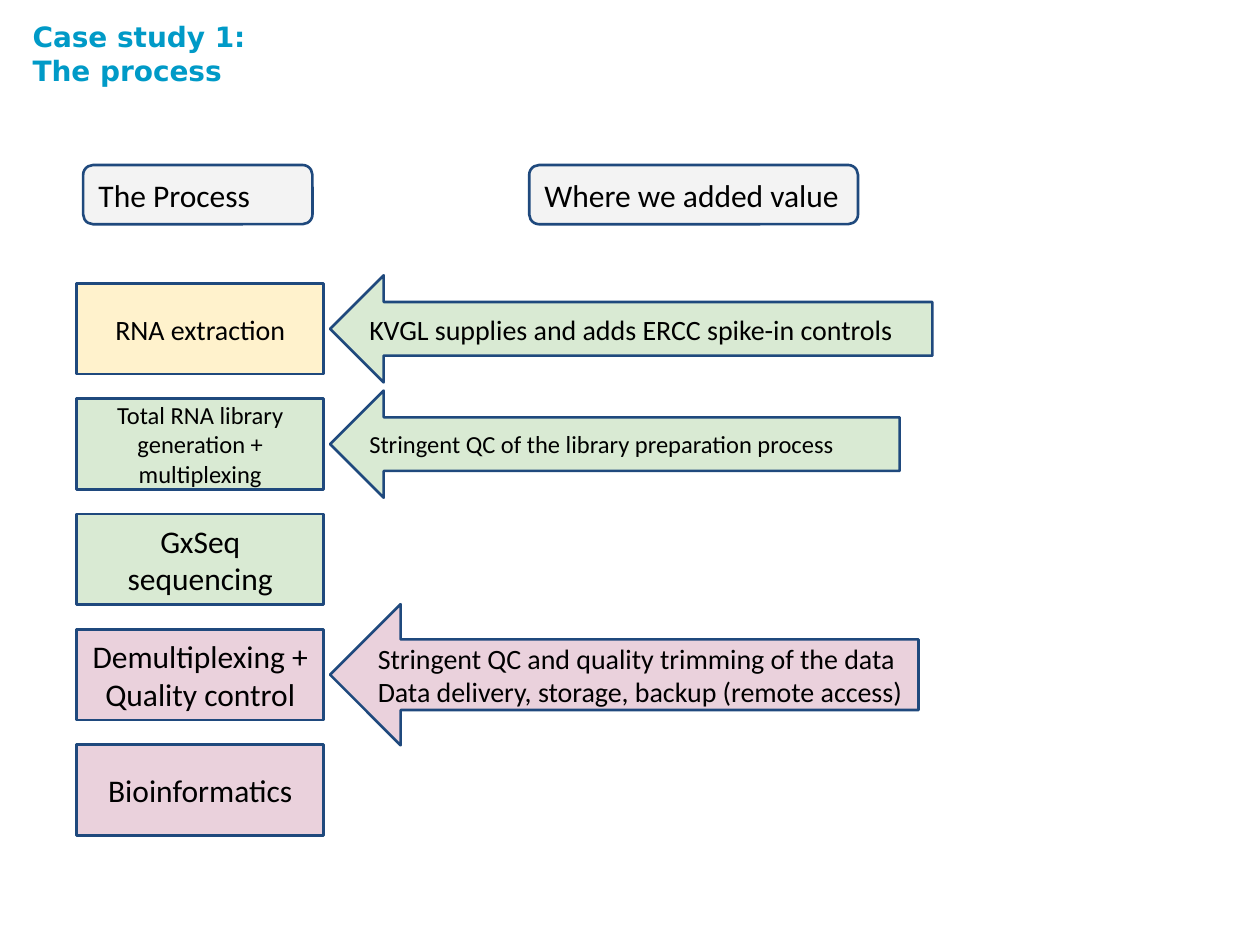
from pptx import Presentation
from pptx.dml.color import RGBColor
from pptx.enum.shapes import MSO_SHAPE
from pptx.enum.text import MSO_ANCHOR, PP_ALIGN
from pptx.util import Inches, Pt

CREAM, GREEN, PINK, GREY = "FFF2CC", "D9EAD3", "EAD1DC", "F3F3F3"
NAVY, BLACK, CYAN = "1F497D", "000000", "009AC7"


def rgb(code):
    return RGBColor.from_string(code)


class Deck:
    font = "Calibri"
    head = "DejaVu Sans"

    def __init__(self):
        self.prs = Presentation()
        self.prs.slide_width = Inches(10)
        self.prs.slide_height = Inches(7.5)
        self.slide = self.prs.slides.add_slide(self.prs.slide_layouts[6])

    def text(self, shape, lines, size, align, font, color, bold=False, pad=0.1):
        frame = shape.text_frame
        frame.word_wrap = True
        frame.vertical_anchor = MSO_ANCHOR.MIDDLE
        frame.margin_left = frame.margin_right = Inches(0.1)
        frame.margin_top = frame.margin_bottom = Inches(pad)
        for i, line in enumerate(lines):
            para = frame.add_paragraph() if i else frame.paragraphs[0]
            para.alignment = align
            run = para.add_run()
            run.text = line
            run.font.name = font
            run.font.size = Pt(size)
            run.font.bold = bold
            run.font.color.rgb = rgb(color)

    def shape(self, kind, x, y, w, h, fill, lines, size, align=PP_ALIGN.LEFT):
        shape = self.slide.shapes.add_shape(
            kind, Inches(x), Inches(y), Inches(w), Inches(h))
        shape.shadow.inherit = False
        shape.fill.solid()
        shape.fill.fore_color.rgb = rgb(fill)
        shape.line.color.rgb = rgb(NAVY)
        shape.line.width = Pt(1.5)
        self.text(shape, lines, size, align, self.font, BLACK)

    def step(self, x, y, w, h, fill, text, size):
        self.shape(MSO_SHAPE.RECTANGLE, x, y, w, h, fill, [text], size,
                   PP_ALIGN.CENTER)

    def arrow(self, x, mid, w, h, fill, lines, size):
        self.shape(MSO_SHAPE.LEFT_ARROW, x, mid - h / 2, w, h, fill, lines, size)

    def label(self, x, y, w, h, text):
        self.shape(MSO_SHAPE.ROUNDED_RECTANGLE, x, y, w, h, GREY, [text], 18)

    def title(self, x, y, w, h, lines):
        box = self.slide.shapes.add_textbox(
            Inches(x), Inches(y), Inches(w), Inches(h))
        self.text(box, lines, 16, PP_ALIGN.LEFT, self.head, CYAN, True, 0.05)


def main():
    deck = Deck()

    # Process steps, evenly spaced down the left
    steps = [
        (CREAM, "RNA extraction", 16),
        (GREEN, "Total RNA library generation + multiplexing", 14),
        (GREEN, "GxSeq sequencing", 18),
        (PINK, "Demultiplexing + Quality control", 18),
        (PINK, "Bioinformatics", 18),
    ]
    top, last, tall = 2.25, 5.91, 0.72
    pitch = (last - top) / (len(steps) - 1)
    for i, (fill, text, size) in enumerate(steps):
        deck.step(0.61, top + i * pitch, 1.96, tall, fill, text, size)

    # Added value, each arrow centred on its step
    arrows = [
        (0, 4.78, 0.85, GREEN,
         ["KVGL supplies and adds ERCC spike-in controls"], 16),
        (1, 4.52, 0.85, GREEN,
         ["Stringent QC of the library preparation process"], 14),
        (3, 4.67, 1.12, PINK,
         ["Stringent QC and quality trimming of the data",
          "Data delivery, storage, backup (remote access)"], 16),
    ]
    for row, wide, high, fill, lines, size in arrows:
        mid = top + row * pitch + tall / 2
        deck.arrow(2.62, mid, wide, high, fill, lines, size)

    # Column labels
    deck.label(0.66, 1.31, 1.82, 0.47, "The Process")
    deck.label(4.2, 1.31, 2.61, 0.47, "Where we added value")

    # Title
    deck.title(0.16, 0.07, 4.85, 0.71, ["Case study 1:", "The process"])

    deck.prs.save("out.pptx")


if __name__ == "__main__":
    main()
